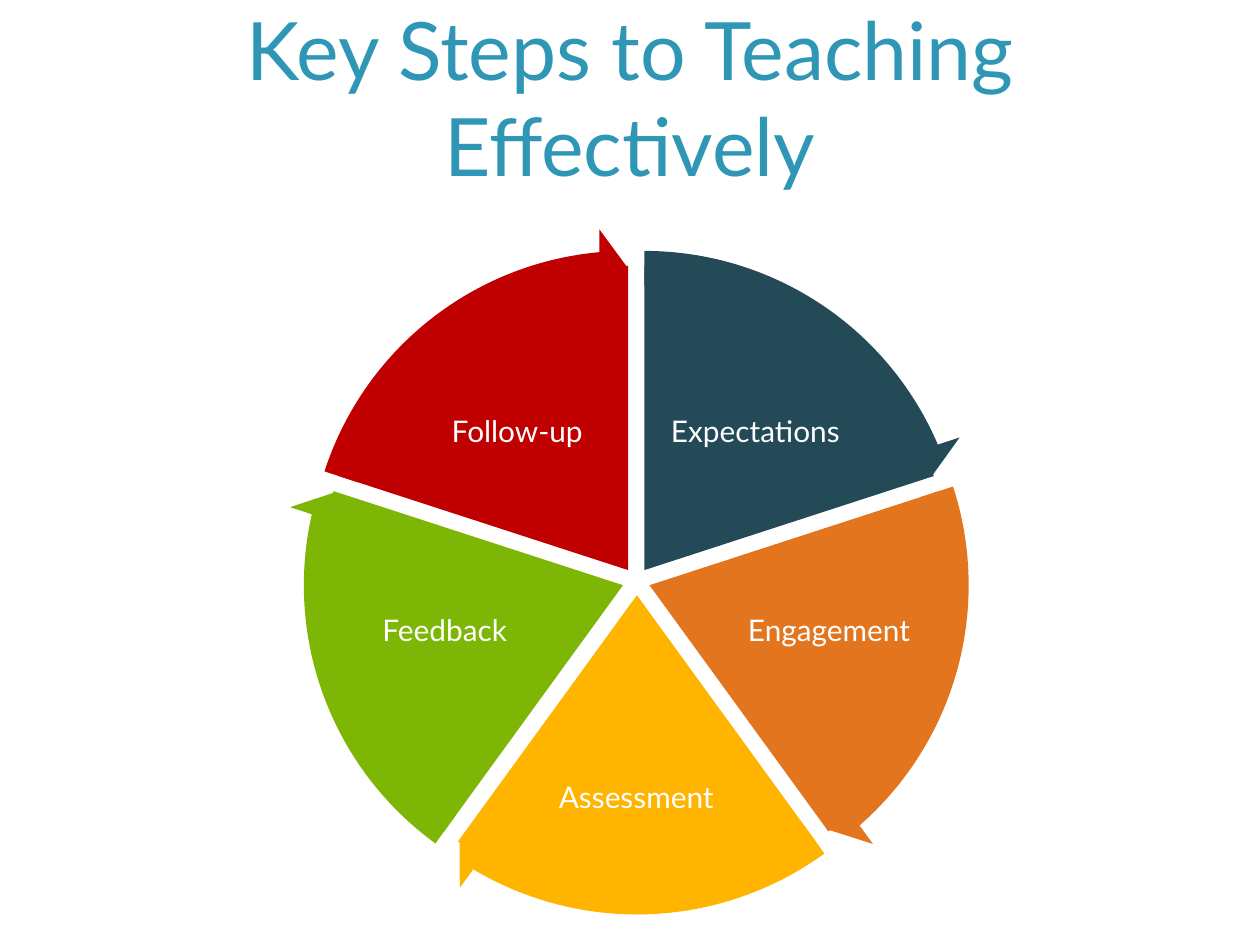
"""Build the five-step teaching cycle slide."""
import pptx
import pptx.util
import pptx.dml.color
import pptx.enum.shapes
import pptx.enum.text

Inches = pptx.util.Inches
RGBColor = pptx.dml.color.RGBColor
MSO_SHAPE = pptx.enum.shapes.MSO_SHAPE
ANCHOR = pptx.enum.text.MSO_ANCHOR

TITLE_BLUE = RGBColor(0x2F, 0x97, 0xB5)
WHITE = RGBColor(0xFF, 0xFF, 0xFF)
SLATE = RGBColor(0x24, 0x4A, 0x58)
ORANGE = RGBColor(0xE2, 0x75, 0x1D)
AMBER = RGBColor(0xFF, 0xB4, 0x00)
GREEN = RGBColor(0x7E, 0xB6, 0x06)
RED = RGBColor(0xC0, 0x00, 0x00)

PIE_SIZE = 4.83
RING_GAP = 0.3
SWEEP = 43.2
FULL_TURN = 216
TOP_ANGLE = 162
HEAD_ANGLE = 3.275

STEPS = [
    ("Expectations", SLATE, 2.70, 2.11, (5.22, 2.92, 1.55, 1.03)),
    ("Engagement", ORANGE, 2.74, 2.23, (5.86, 4.44, 1.44, 1.15)),
    ("Assessment", AMBER, 2.64, 2.31, (4.36, 5.71, 1.38, 1.26)),
    ("Feedback", GREEN, 2.53, 2.23, (2.81, 4.44, 1.44, 1.15)),
    ("Follow-up", RED, 2.57, 2.11, (3.33, 2.92, 1.55, 1.03)),
]


def add_text(shapes, box, text, size, color, frame_format, spacing):
    tf = shapes.add_textbox(*map(Inches, box)).text_frame
    for name, value in frame_format.items():
        setattr(tf, name, value)
    p = tf.paragraphs[0]
    p.alignment = pptx.enum.text.PP_ALIGN.CENTER
    p.line_spacing = spacing
    r = p.add_run()
    r.text = text
    for name, value in {"name": "Lato", "size": pptx.util.Pt(size)}.items():
        setattr(r.font, name, value)
    r.font.color.rgb = color


def add_sector(shapes, kind, left, top, size, color, adjustments):
    sp = shapes.add_shape(kind, Inches(left), Inches(top), Inches(size), Inches(size))
    sp.shadow.inherit = False
    sp.fill.solid()
    sp.fill.fore_color.rgb = color
    sp.line.fill.background()
    for i, value in enumerate(adjustments):
        sp.adjustments[i] = value


prs = pptx.Presentation()
prs.slide_width = Inches(10)
prs.slide_height = Inches(7.5)
s = prs.slides.add_slide(prs.slide_layouts[6])

title_format = {"word_wrap": True, "vertical_anchor": ANCHOR.BOTTOM}
label_format = {"word_wrap": True, "vertical_anchor": ANCHOR.MIDDLE}
for side in ("left", "right", "top", "bottom"):
    label_format["margin_" + side] = Inches(0.02)

add_text(s.shapes, (0.6, 0.12, 8.8, 1.46), "Key Steps to Teaching Effectively",
         46, TITLE_BLUE, title_format, 1.0)

cycle = s.shapes.add_group_shape().shapes
angles = [(TOP_ANGLE + i * SWEEP) % FULL_TURN for i in range(len(STEPS) + 1)]

for i, (label, color, left, top, box) in enumerate(STEPS):
    add_sector(cycle, MSO_SHAPE.PIE, left, top, PIE_SIZE, color, angles[i:i + 2])
    add_text(cycle, box, label, 17, WHITE, label_format, 0.9)

for i, (label, color, left, top, box) in enumerate(STEPS):
    add_sector(cycle, MSO_SHAPE.CIRCULAR_ARROW, left - RING_GAP, top - RING_GAP,
               PIE_SIZE + 2 * RING_GAP, color,
               (0.051, HEAD_ANGLE, angles[i + 1] - HEAD_ANGLE, angles[i], 0.059))

prs.save("out.pptx")
